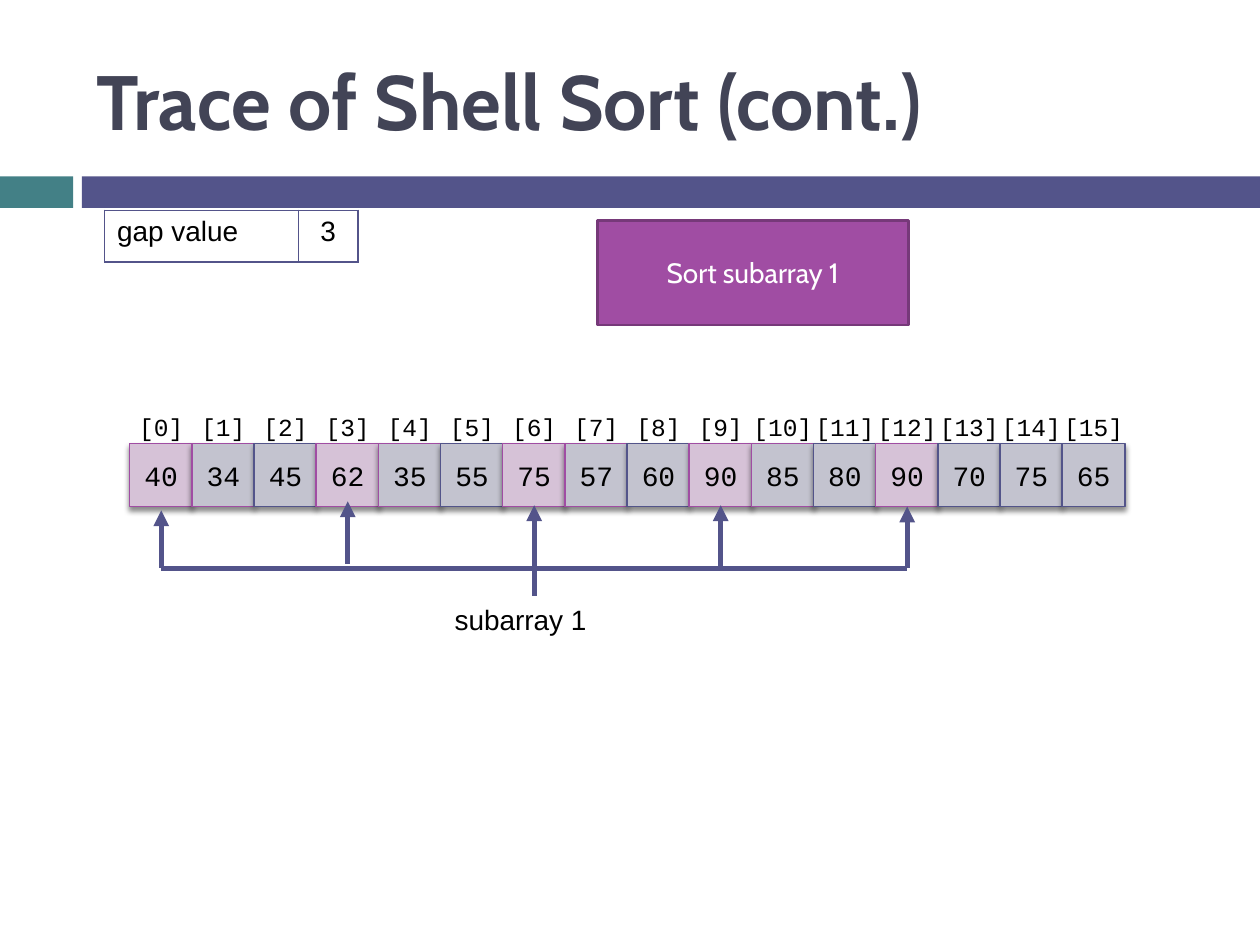
from lxml.etree import SubElement
from pptx import Presentation
from pptx.dml.color import RGBColor
from pptx.enum.shapes import MSO_CONNECTOR as Link, MSO_SHAPE as Preset
from pptx.enum.text import MSO_ANCHOR as Anchor, PP_ALIGN as Align
from pptx.oxml.ns import qn
from pptx.util import Inches, Pt

TITLE = "Trace of Shell Sort (cont.)"
STEP = "Sort subarray 1"
GROUP_LABEL = "subarray 1"
GAP_ROW = ("gap value", "3")
VALUES = [40, 34, 45, 62, 35, 55, 75, 57, 60, 90, 85, 80, 90, 70, 75, 65]
ARROWS = {0: (4.05, 4.51), 3: (3.98, 4.48), 6: (4.01, 4.73), 9: (4.01, 4.51), 12: (4.02, 4.51)}

INDIGO, TEAL, PURPLE = "53548A", "438086", "A04DA3"
MEMBER, OTHER, BLACK = "D6C2D7", "C3C3CF", "000000"
CODE = dict(name="Courier New", size=Pt(16))
INDEX = dict(name="Courier New", size=Pt(14))
PLAIN = dict(name="Arial", size=Pt(16))
HEADING = dict(name="Cabin", size=Pt(44), bold=True)
CAPTION = dict(name="Cabin", size=Pt(16))

WIDTH, HEIGHT = 10, 7.5
CELL = 0.5
ROW_LEFT, ROW_TOP = 1.03, 3.52
PITCH = (8.43 - ROW_LEFT) / (len(VALUES) - 1)
BAR_Y = 4.51


def hue(code):
    return RGBColor.from_string(code)


def write(frame, text, style, color=BLACK, align=Align.LEFT):
    line = frame.paragraphs[0]
    line.alignment = align
    run = line.add_run()
    run.text = text
    for key, value in style.items():
        setattr(run.font, key, value)
    run.font.color.rgb = hue(color)


def box(area, fill, edge=None, weight=0.79):
    rect = slide.shapes.add_shape(Preset.RECTANGLE, *map(Inches, area))
    rect.shadow.inherit = False
    rect.fill.solid()
    rect.fill.fore_color.rgb = hue(fill)
    if edge:
        rect.line.color.rgb = hue(edge)
        rect.line.width = Pt(weight)
    else:
        rect.line.fill.background()
    return rect


def label(area, text, style, color=BLACK, align=Align.LEFT, anchor=Anchor.TOP, wrap=True):
    frame = slide.shapes.add_textbox(*map(Inches, area)).text_frame
    frame.word_wrap = wrap
    frame.vertical_anchor = anchor
    write(frame, text, style, color, align)


def drop_shadow(shape):
    effects = shape._element.spPr.find(qn("a:effectLst"))
    cast = SubElement(effects, qn("a:outerShdw"), blurRad=str(Pt(3)), dist=str(Pt(2.4)),
                      dir="5400000", rotWithShape="0")
    tint = SubElement(cast, qn("a:srgbClr"), val=BLACK)
    SubElement(tint, qn("a:alpha"), val="45000")


def link(start, end, head=False):
    wire = slide.shapes.add_connector(Link.STRAIGHT, *map(Inches, (*start, *end)))
    wire.line.color.rgb = hue(INDIGO)
    wire.line.width = Pt(3)
    if head:
        SubElement(wire.line._get_or_add_ln(), qn("a:headEnd"), type="triangle")
    SubElement(wire._element.spPr, qn("a:effectLst"))


def border(cell):
    props = cell._tc.get_or_add_tcPr()
    for place, side in enumerate(("a:lnL", "a:lnR", "a:lnT", "a:lnB")):
        edge = props.makeelement(qn(side), {"w": str(Pt(1))})
        paint = SubElement(edge, qn("a:solidFill"))
        SubElement(paint, qn("a:srgbClr"), val=INDIGO)
        props.insert(place, edge)


def center(index):
    return ROW_LEFT + index * PITCH + CELL / 2


deck = Presentation()
deck.slide_width, deck.slide_height = Inches(WIDTH), Inches(HEIGHT)
slide = deck.slides.add_slide(deck.slide_layouts[6])

box((0, 1.4, 0.58, 0.25), TEAL)
box((0.65, 1.4, WIDTH - 0.65, 0.25), INDIGO)
label((0.67, 0.25, 8.92, 1.08), TITLE, HEADING, "424456", anchor=Anchor.MIDDLE)

for index, value in enumerate(VALUES):
    purple_edge = index % 3 < 2 and index <= max(ARROWS)
    cell = box((center(index) - CELL / 2, ROW_TOP, CELL, CELL),
               MEMBER if index in ARROWS else OTHER, PURPLE if purple_edge else INDIGO)
    drop_shadow(cell)
    cell.text_frame.word_wrap = False
    write(cell.text_frame, str(value), CODE, align=Align.CENTER)

for index in range(len(VALUES)):
    span = 0.6 if index < 10 else 0.8
    label((center(index) - span / 2, ROW_TOP - 0.3, span, 0.34), f"[{index}]", INDEX,
          align=Align.CENTER, wrap=False)

gap_table = slide.shapes.add_table(1, 2, *map(Inches, (0.83, 1.67, 2.01, 0.41))).table
gap_table.first_row = gap_table.horz_banding = False
for column, (text, span, align) in enumerate(zip(GAP_ROW, (1.54, 0.47), (Align.LEFT, Align.CENTER))):
    gap_table.columns[column].width = Inches(span)
    cell = gap_table.cell(0, column)
    cell.fill.background()
    border(cell)
    write(cell.text_frame, text, PLAIN, align=align)

step = box((4.74, 1.75, 2.47, 0.83), PURPLE, "763979", 1.5)
write(step.text_frame, STEP, CAPTION, "FFFFFF", Align.CENTER)

label((3.51, 4.73, 3.13, 0.37), GROUP_LABEL, PLAIN)
link((center(min(ARROWS)), BAR_Y), (center(max(ARROWS)), BAR_Y))
for index, (tip, foot) in ARROWS.items():
    link((center(index), tip), (center(index), foot), head=True)

deck.save("out.pptx")
